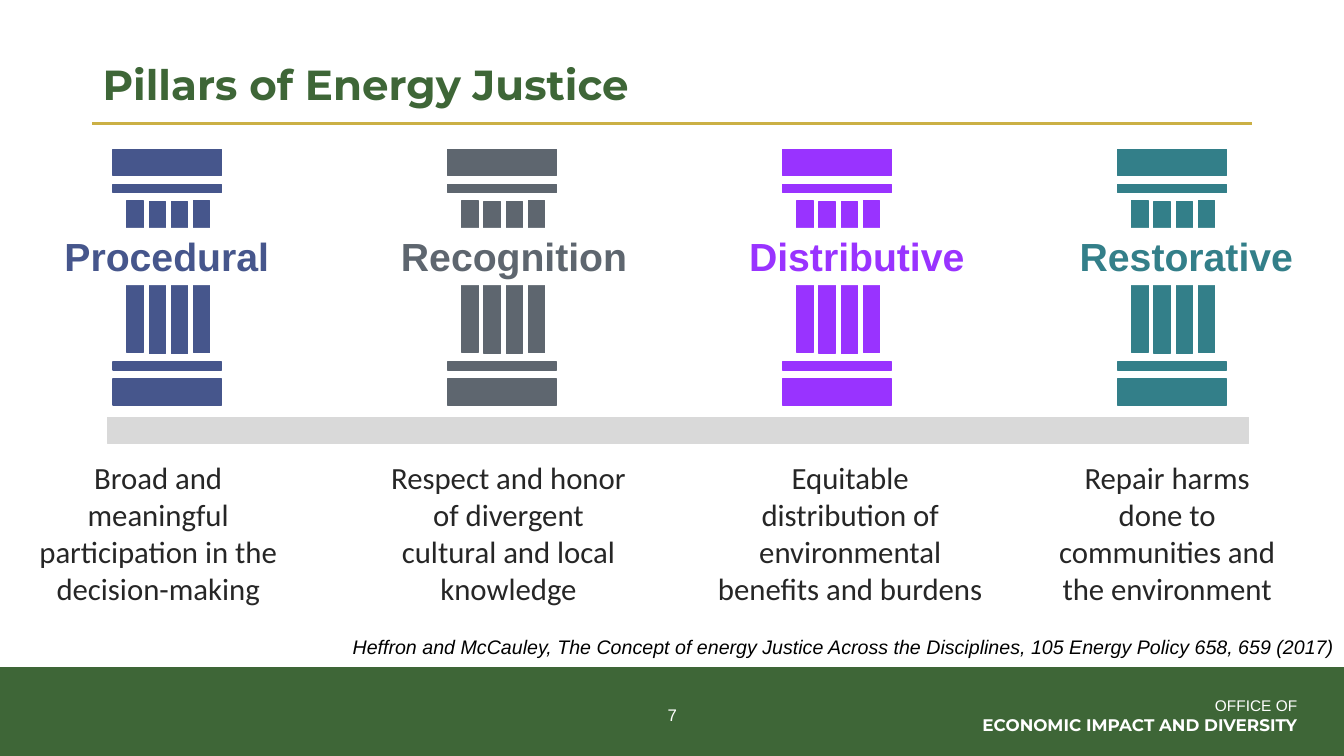
"""Build the slide on the four pillars of energy justice."""
from pptx import Presentation
from pptx.dml.color import RGBColor
from pptx.enum.shapes import MSO_CONNECTOR, MSO_SHAPE
from pptx.enum.text import MSO_ANCHOR, PP_ALIGN
from pptx.oxml.ns import qn
from pptx.util import Pt
from lxml.etree import SubElement

GREEN = RGBColor(0x3E, 0x66, 0x37)
GOLD = RGBColor(0xCB, 0xB0, 0x45)
WHITE = RGBColor(0xFF, 0xFF, 0xFF)
BLACK = RGBColor(0x00, 0x00, 0x00)
INK = RGBColor(0x26, 0x26, 0x26)
PALE = RGBColor(0xD9, 0xD9, 0xD9)
BLUE = RGBColor(0x46, 0x56, 0x8C)
GRAY = RGBColor(0x5E, 0x66, 0x6F)
PURPLE = RGBColor(0x99, 0x33, 0xFF)
TEAL = RGBColor(0x33, 0x7F, 0x89)

TITLE = "Pillars of Energy Justice"
CITATION = ("Heffron and McCauley, The Concept of energy Justice Across the Disciplines, "
            "105 Energy Policy 658, 659 (2017)")
OFFICE = [("OFFICE OF", 11, "Arial", False),
          ("ECONOMIC IMPACT AND DIVERSITY", 12, "Montserrat", True)]
PAGE_NUMBER = "7"
# name, colour, label (left, width), description, description (left, width)
PILLARS = [
    ("Procedural", BLUE, (33.8, 170.6),
     "Broad and meaningful participation in the decision-making", (18.7, 188.6)),
    ("Recognition", GRAY, (262.8, 208.8),
     "Respect and honor of divergent cultural and local knowledge", (267.8, 190.8)),
    ("Distributive", PURPLE, (507.6, 208.8),
     "Equitable distribution of environmental benefits and burdens", (505.4, 203.8)),
    ("Restorative", TEAL, (743, 208.8),
     "Repair harms done to communities and the environment", (746.6, 174.2)),
]
PILLAR_LEFT, PILLAR_STEP, PILLAR_WIDTH = 80.6, 239.25, 77.8
SLABS = [(106.6, 18.7), (131.8, 5.8), (270.7, 18.7), (258.5, 5.8)]
SHAFT_INSET, SHAFT_STEP, SHAFT_WIDTH, SHAFT_HEIGHT = 10.1, 15.9, 11.5, 108.7
SHAFT_TOPS = [143.3, 144, 144, 143.3]


def add_block(shapes, left, top, width, height, color, outlined=True):
    block = shapes.add_shape(MSO_SHAPE.RECTANGLE, Pt(left), Pt(top), Pt(width), Pt(height))
    block.shadow.inherit = False
    block.fill.solid()
    block.fill.fore_color.rgb = color
    if outlined:
        block.line.color.rgb = color
        block.line.width = Pt(1)
    else:
        block.line.fill.background()
    return block


def add_box(page, left, top, width, height):
    return page.shapes.add_textbox(Pt(left), Pt(top), Pt(width), Pt(height))


def write(shape, lines, color, align=PP_ALIGN.LEFT, anchor=MSO_ANCHOR.TOP,
          inset=None, italic=False):
    frame = shape.text_frame
    frame.word_wrap = True
    frame.vertical_anchor = anchor
    if inset is not None:
        frame.margin_left = frame.margin_right = Pt(inset)
        frame.margin_top = frame.margin_bottom = Pt(inset)
    for index, (text, size, name, bold) in enumerate(lines):
        para = frame.add_paragraph() if index else frame.paragraphs[0]
        para.text = text
        para.alignment = align
        font = para.font
        font.size, font.name, font.bold, font.italic = Pt(size), name, bold, italic
        font.color.rgb = color
    return frame


def add_pillar(page, left, color):
    shapes = page.shapes.add_group_shape().shapes
    for top, height in SLABS:
        add_block(shapes, left, top, PILLAR_WIDTH, height, color)
    for index, top in enumerate(SHAFT_TOPS):
        shaft_left = left + SHAFT_INSET + index * SHAFT_STEP
        add_block(shapes, shaft_left, top, SHAFT_WIDTH, SHAFT_HEIGHT, color)


def main():
    deck = Presentation()
    deck.slide_width, deck.slide_height = Pt(960), Pt(540)
    page = deck.slides.add_slide(deck.slide_layouts[6])

    add_block(page.shapes, 0, 476.6, 960, 63.4, GREEN, outlined=False)
    write(add_box(page, 535.7, 496.8, 391, 28.1), OFFICE, WHITE,
          PP_ALIGN.RIGHT, MSO_ANCHOR.MIDDLE, inset=0)
    rule = page.shapes.add_connector(MSO_CONNECTOR.STRAIGHT, Pt(66), Pt(88.4), Pt(894), Pt(88.4))
    rule.line.color.rgb = GOLD
    rule.line.width = Pt(2)
    SubElement(rule._element.spPr, qn("a:effectLst"))
    title = write(add_box(page, 66.2, 28.8, 828, 66.2), [(TITLE, 30, "Montserrat", True)],
                  GREEN, anchor=MSO_ANCHOR.MIDDLE)
    title.paragraphs[0].line_spacing = 0.9

    for index, (name, color, *details) in enumerate(PILLARS):
        add_pillar(page, PILLAR_LEFT + index * PILLAR_STEP, color)
    add_block(page.shapes, 77, 298.1, 815, 18.7, PALE)
    for name, color, (label_left, label_width), text, (text_left, text_width) in PILLARS:
        label = add_block(page.shapes, label_left, 162.7, label_width, 41, WHITE, outlined=False)
        write(label, [(name, 28, "Arial", True)], color, PP_ALIGN.CENTER)
        write(add_box(page, text_left, 324, text_width, 113.8),
              [(text, 22, "Calibri", False)], INK, PP_ALIGN.CENTER)

    write(add_box(page, 244.8, 450, 717.1, 24.5), [(CITATION, 14, "Arial", False)],
          BLACK, italic=True)
    write(add_box(page, 452.9, 496.1, 54.7, 28.8), [(PAGE_NUMBER, 12, "Arial", False)],
          WHITE, PP_ALIGN.CENTER, MSO_ANCHOR.MIDDLE, inset=7.2)
    deck.save("out.pptx")


if __name__ == "__main__":
    main()
